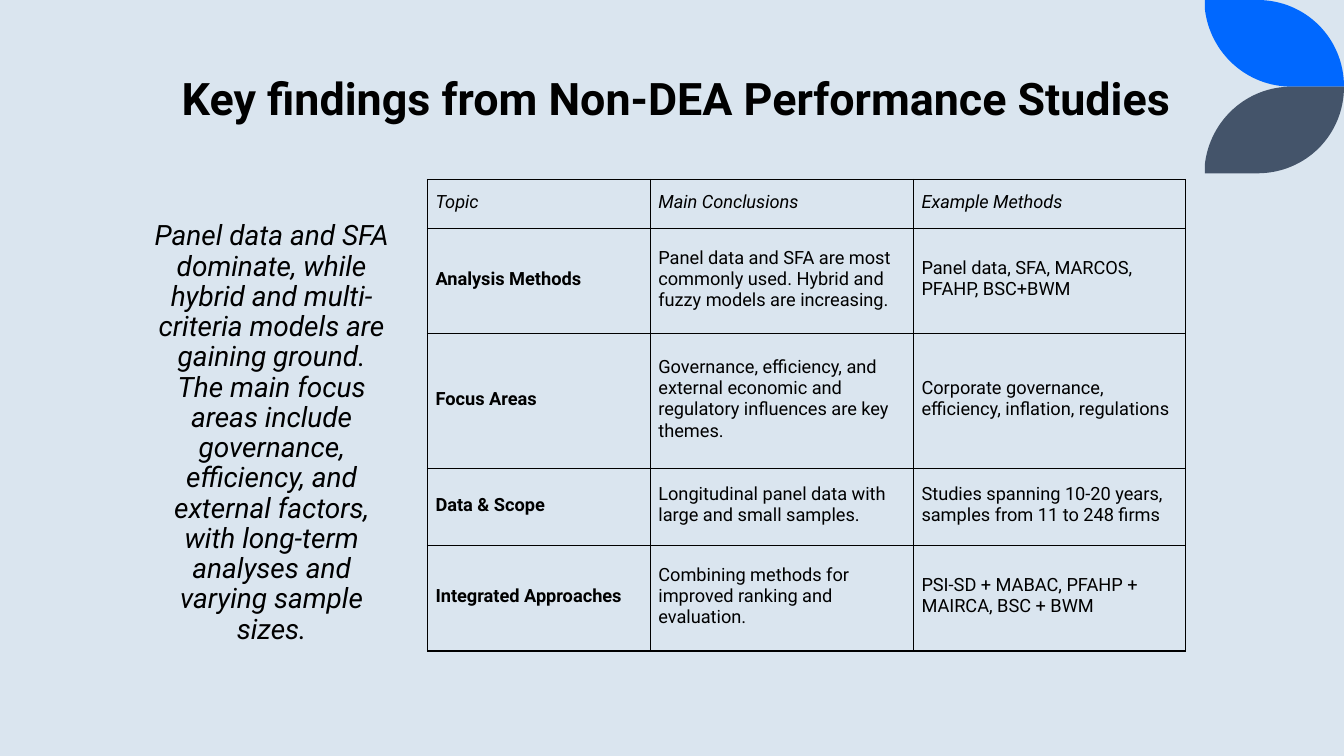
from lxml.etree import SubElement
from pptx import Presentation
from pptx.dml.color import RGBColor
from pptx.enum.text import MSO_ANCHOR, PP_ALIGN
from pptx.oxml.ns import qn
from pptx.util import Inches, Pt

BACKGROUND = RGBColor(0xDA, 0xE5, 0xEF)
BLUE = RGBColor(0x00, 0x68, 0xFF)
SLATE = RGBColor(0x44, 0x54, 0x6A)
BLACK = RGBColor(0x00, 0x00, 0x00)
FONT = "Roboto"

TITLE = "Key findings from Non-DEA Performance Studies"
SUMMARY = (
    "Panel data and SFA dominate, while hybrid and multi-criteria models are "
    "gaining ground. The main focus areas include governance, efficiency, and "
    "external factors, with long-term analyses and varying sample sizes."
)
FINDINGS = [
    ("Topic", "Main Conclusions", "Example Methods"),
    ("Analysis Methods",
     "Panel data and SFA are most commonly used. Hybrid and fuzzy models are increasing.",
     "Panel data, SFA, MARCOS, PFAHP, BSC+BWM"),
    ("Focus Areas",
     "Governance, efficiency, and external economic and regulatory influences are key themes.",
     "Corporate governance, efficiency, inflation, regulations"),
    ("Data & Scope",
     "Longitudinal panel data with large and small samples.",
     "Studies spanning 10-20 years, samples from 11 to 248 firms"),
    ("Integrated Approaches",
     "Combining methods for improved ranking and evaluation.",
     "PSI-SD + MABAC, PFAHP + MAIRCA, BSC + BWM"),
]
COLUMN_WIDTHS = [2.21, 2.61, 2.7]
ROW_HEIGHTS = [0.49, 1.04, 1.34, 0.76, 1.05]

LEAF_HEIGHT = 0.86
LEAF_START = (11.95, 0)
# Each half of the leaf is a line to the first point, then a curve through the rest.
LEAF_HALVES = [
    [(12.47, 0), (12.95, 0), (13.33, 0.38), (13.33, LEAF_HEIGHT)],
    [(12.81, LEAF_HEIGHT), (12.36, LEAF_HEIGHT), (12, 0.52), (11.95, 0.09)],
]


def format_text(p, size, bold=False, italic=False):
    for r in p.runs:
        r.font.name = FONT
        r.font.size = Pt(size)
        r.font.bold = bold
        r.font.italic = italic
        r.font.color.rgb = BLACK


def bend_halves(sp):
    """Turn the last three line segments of each leaf half into one curve."""
    segments = list(sp._element.iter(qn("a:lnTo")))
    size = len(LEAF_HALVES[0])
    for i in range(0, size * len(LEAF_HALVES), size):
        first, *rest = segments[i + 1:i + size]
        first.tag = qn("a:cubicBezTo")
        for segment in rest:
            first.append(segment[0])
            segment.getparent().remove(segment)


def add_leaf(s, color, mirrored=False):
    """Draw the corner leaf, or its mirror image below it."""
    outline = [LEAF_START] + sum(LEAF_HALVES, [])
    if mirrored:
        outline = [(x, 2 * LEAF_HEIGHT - y) for x, y in outline]
    points = [(Inches(x), Inches(y)) for x, y in outline]
    builder = s.shapes.build_freeform(*points[0])
    builder.add_line_segments(points[1:], close=True)
    sp = builder.convert_to_shape()
    bend_halves(sp)
    sp.shadow.inherit = False
    sp.fill.solid()
    sp.fill.fore_color.rgb = color
    sp.line.fill.background()


def set_title(s):
    sp = s.shapes.title
    sp.left, sp.top = Inches(1.41), Inches(0.64)
    sp.width, sp.height = Inches(10.6), Inches(0.64)
    tf = sp.text_frame
    tf.text = TITLE
    tf.word_wrap = True
    tf.vertical_anchor = MSO_ANCHOR.BOTTOM
    p = tf.paragraphs[0]
    p.alignment = PP_ALIGN.CENTER
    p.line_spacing = 0.8
    format_text(p, 32, bold=True)


def add_summary(s):
    sp = s.shapes.add_textbox(Inches(1.41), Inches(2.15), Inches(2.57), Inches(3.95))
    tf = sp.text_frame
    tf.text = SUMMARY
    tf.word_wrap = True
    p = tf.paragraphs[0]
    p.alignment = PP_ALIGN.CENTER
    p.line_spacing = 0.9
    p.space_before = Pt(10)
    format_text(p, 20, italic=True)


def set_borders(cell):
    tc_pr = cell._tc.get_or_add_tcPr()
    for side in ("a:lnL", "a:lnR", "a:lnT", "a:lnB"):
        line = SubElement(tc_pr, qn(side), w=str(Pt(1)))
        fill = SubElement(line, qn("a:solidFill"))
        SubElement(fill, qn("a:srgbClr"), val=str(BLACK))


def fill_cell(cell, text, bold, italic):
    set_borders(cell)
    cell.fill.background()
    cell.vertical_anchor = MSO_ANCHOR.MIDDLE
    cell.margin_left = cell.margin_right = cell.margin_bottom = Inches(0.08)
    cell.margin_top = Inches(0.04)
    cell.text = text
    format_text(cell.text_frame.paragraphs[0], 13, bold, italic)


def add_findings_table(s):
    table = s.shapes.add_table(
        len(ROW_HEIGHTS), len(COLUMN_WIDTHS), Inches(4.24), Inches(1.78),
        Inches(sum(COLUMN_WIDTHS)), Inches(sum(ROW_HEIGHTS))).table
    table.first_row = table.horz_banding = False
    for column, width in zip(table.columns, COLUMN_WIDTHS):
        column.width = Inches(width)
    for row, height in zip(table.rows, ROW_HEIGHTS):
        row.height = Inches(height)
    for i, texts in enumerate(FINDINGS):
        for j, text in enumerate(texts):
            fill_cell(table.cell(i, j), text, bold=i > 0 and j == 0, italic=i == 0)


def main():
    prs = Presentation()
    prs.slide_width, prs.slide_height = Inches(13.33), Inches(7.5)
    s = prs.slides.add_slide(prs.slide_layouts[5])
    s.background.fill.solid()
    s.background.fill.fore_color.rgb = BACKGROUND
    add_leaf(s, BLUE)
    add_leaf(s, SLATE, mirrored=True)
    set_title(s)
    add_summary(s)
    add_findings_table(s)
    prs.save("out.pptx")


if __name__ == "__main__":
    main()
